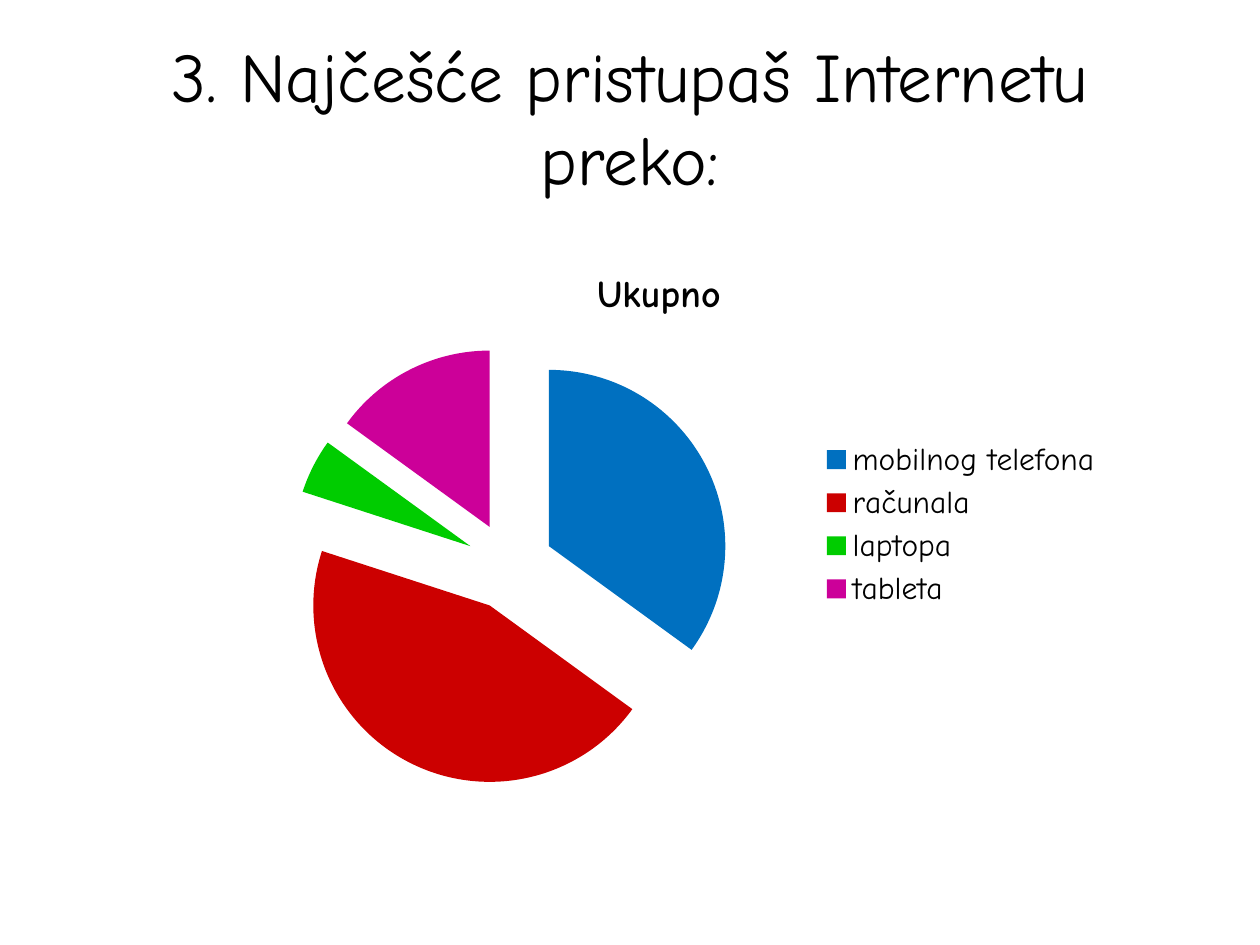
from dataclasses import dataclass

from lxml.etree import SubElement
from pptx import Presentation
from pptx.chart.data import CategoryChartData
from pptx.dml.color import RGBColor
from pptx.enum.chart import XL_CHART_TYPE, XL_LEGEND_POSITION
from pptx.enum.text import MSO_ANCHOR, PP_ALIGN
from pptx.util import Cm, Pt

QUESTION = "3. Najčešće pristupaš Internetu preko:"
TOTAL = "Ukupno"
ANSWERS = [
    ("mobilnog telefona", 35, "0070C0"),
    ("računala", 45, "CC0000"),
    ("laptopa", 5, "00CC00"),
    ("tableta", 15, "CC0099"),
]
EXPLOSION = 25  # percent of the radius


@dataclass(frozen=True)
class Theme:
    font: str = "Comic Neue"
    base_font: str = "Calibri"
    ink: str = "000000"
    question_size: float = 39.6
    total_size: float = 21.6
    legend_size: float = 18


THEME = Theme()


def style(font, size, name=THEME.font, bold=False):
    font.name = name
    font.size = Pt(size)
    font.bold = bold
    font.color.rgb = RGBColor.from_string(THEME.ink)


def add_question(slide):
    question = slide.shapes.add_textbox(Cm(1.27), Cm(0.76), Cm(22.86), Cm(3.18))
    frame = question.text_frame
    frame.word_wrap = True
    frame.vertical_anchor = MSO_ANCHOR.MIDDLE
    paragraph = frame.paragraphs[0]
    paragraph.alignment = PP_ALIGN.CENTER
    run = paragraph.add_run()
    run.text = QUESTION
    style(run.font, THEME.question_size)


def explode(series):
    """Pull every slice out; the schema wants the element right after c:tx."""
    ser = series._element
    namespace = ser.tag.split("}")[0] + "}"
    explosion = SubElement(ser, namespace + "explosion", val=str(EXPLOSION))
    ser.find(namespace + "tx").addnext(explosion)


def add_answers_pie(slide):
    names, shares, colours = zip(*ANSWERS)
    answers = CategoryChartData()
    answers.categories = names
    answers.add_series(TOTAL, shares)
    chart = slide.shapes.add_chart(
        XL_CHART_TYPE.PIE, Cm(4.09), Cm(4.93), Cm(18.39), Cm(11.28), answers
    ).chart
    style(chart.font, THEME.legend_size, THEME.base_font)

    chart.has_title = True
    total = chart.chart_title.text_frame.paragraphs[0].add_run()
    total.text = TOTAL
    style(total.font, THEME.total_size, bold=True)

    chart.has_legend = True
    chart.legend.position = XL_LEGEND_POSITION.RIGHT
    chart.legend.include_in_layout = False
    style(chart.legend.font, THEME.legend_size)

    pie = chart.plots[0]
    pie.vary_by_categories = True
    series = pie.series[0]
    for index, colour in enumerate(colours):
        fill = series.points[index].format.fill
        fill.solid()
        fill.fore_color.rgb = RGBColor.from_string(colour)
    explode(series)


def main():
    deck = Presentation()
    deck.slide_width, deck.slide_height = Cm(25.4), Cm(19.05)
    slide = deck.slides.add_slide(deck.slide_layouts[6])
    add_question(slide)
    add_answers_pie(slide)
    deck.save("out.pptx")


if __name__ == "__main__":
    main()
